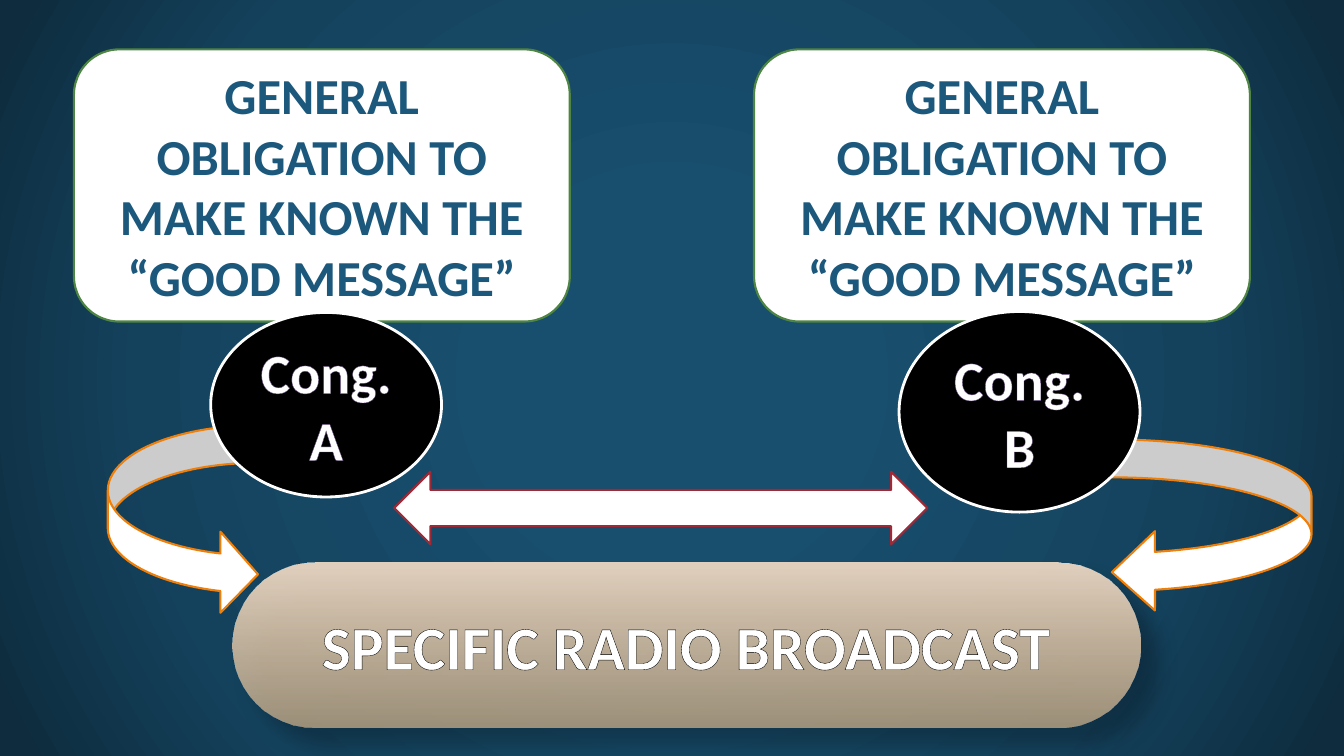
from dataclasses import dataclass
from typing import Optional

from lxml.etree import SubElement
from pptx import Presentation
from pptx.dml.color import RGBColor
from pptx.enum.shapes import MSO_SHAPE
from pptx.enum.text import MSO_ANCHOR, PP_ALIGN
from pptx.oxml import parse_xml
from pptx.oxml.ns import nsdecls, qn
from pptx.util import Pt

WHITE = "FFFFFF"
BLACK = "000000"
ORANGE = "F07F09"
OBLIGATION = "GENERAL OBLIGATION TO MAKE KNOWN THE “GOOD MESSAGE”"


@dataclass
class Label:
    text: str
    size: float
    color: str = WHITE
    outline: Optional[str] = None
    outline_width: float = 0


@dataclass
class Figure:
    kind: MSO_SHAPE
    left: float
    top: float
    width: float
    height: float
    fill: Optional[str] = WHITE
    line: Optional[str] = None
    line_width: float = 1.5
    adjustments: tuple = ()
    label: Optional[Label] = None


def rgb(color: str) -> RGBColor:
    return RGBColor.from_string(color)


def set_gradient(fill, owner, stops: list, direction: str) -> None:
    fill.gradient()
    gradient = next(owner.element.iter(qn("a:gradFill")))
    for child in list(gradient):
        gradient.remove(child)
    stop_list = SubElement(gradient, qn("a:gsLst"))
    for position, color, opacity in stops:
        stop = SubElement(stop_list, qn("a:gs"), pos=str(position * 1000))
        value = SubElement(stop, qn("a:srgbClr"), val=color)
        if opacity < 100:
            SubElement(value, qn("a:alpha"), val=str(opacity * 1000))
    gradient.append(parse_xml(direction))


def add_label(shape, label: Label) -> None:
    text_frame = shape.text_frame
    text_frame.text = label.text
    text_frame.word_wrap = True
    text_frame.vertical_anchor = MSO_ANCHOR.MIDDLE
    paragraph = text_frame.paragraphs[0]
    paragraph.alignment = PP_ALIGN.CENTER
    run = paragraph.runs[0]
    run.font.name = "Calibri"
    run.font.size = Pt(label.size)
    run.font.bold = True
    run.font.color.rgb = rgb(label.color)
    if label.outline:
        run.font._element.insert(0, parse_xml(
            f'<a:ln {nsdecls("a")} w="{Pt(label.outline_width)}"><a:solidFill>'
            f'<a:srgbClr val="{label.outline}"/></a:solidFill></a:ln>'))


def add_figure(slide, figure: Figure):
    shape = slide.shapes.add_shape(
        figure.kind, Pt(figure.left), Pt(figure.top), Pt(figure.width), Pt(figure.height))
    shape.shadow.inherit = False
    for index, value in enumerate(figure.adjustments):
        shape.adjustments[index] = value
    if figure.fill:
        shape.fill.solid()
        shape.fill.fore_color.rgb = rgb(figure.fill)
    if figure.line:
        shape.line.color.rgb = rgb(figure.line)
        shape.line.width = Pt(figure.line_width)
    else:
        shape.line.fill.background()
    if figure.label:
        add_label(shape, figure.label)
    return shape


def add_broadcast(slide) -> None:
    shape = add_figure(slide, Figure(
        MSO_SHAPE.ROUNDED_RECTANGLE, 166.3, 401.8, 648, 118, fill=None, adjustments=(0.5,),
        label=Label("SPECIFIC RADIO BROADCAST", 44, outline=BLACK, outline_width=1.06)))
    set_gradient(shape.fill, shape, [(0, "E2D1BE", 100), (100, "CEB18C", 74)],
                 f'<a:lin {nsdecls("a")} ang="5400000" scaled="0"/>')
    effects = next(shape.element.iter(qn("a:effectLst")))
    effects.append(parse_xml(
        f'<a:outerShdw {nsdecls("a")} blurRad="{Pt(15)}" dist="{Pt(18)}" dir="2700000" '
        f'algn="tl" rotWithShape="0"><a:srgbClr val="{BLACK}">'
        '<a:alpha val="30000"/></a:srgbClr></a:outerShdw>'))


def obligation_box(left: float) -> Figure:
    return Figure(MSO_SHAPE.ROUNDED_RECTANGLE, left, 35.3, 354.2, 194.4, line="4E8542",
                  label=Label(OBLIGATION, 36, "1B587C"))


def congregation(name: str, left: float, top: float, width: float, height: float) -> Figure:
    return Figure(MSO_SHAPE.OVAL, left, top, width, height, BLACK, WHITE, 2,
                  label=Label(f"Cong. {name}", 40, outline="604878", outline_width=0.8))


def main() -> None:
    presentation = Presentation()
    presentation.slide_width = Pt(960)
    presentation.slide_height = Pt(540)
    slide = presentation.slides.add_slide(presentation.slide_layouts[6])
    set_gradient(
        slide.background.fill, slide,
        [(0, "184E6E", 100), (23, "184E6E", 100), (69, "14425D", 100), (97, "0E2C3E", 100)],
        f'<a:path {nsdecls("a")} path="circle">'
        '<a:fillToRect l="50000" t="50000" r="50000" b="50000"/></a:path>')

    for left in (52.8, 538.6):
        add_figure(slide, obligation_box(left))
    add_broadcast(slide)
    for figure in (
        Figure(MSO_SHAPE.CURVED_RIGHT_ARROW, 77, 303.8, 107.3, 135.4, line=ORANGE,
               adjustments=(0.25, 0.54, 0.25)),
        congregation("A", 150.5, 223.2, 164.9, 131.8),
        Figure(MSO_SHAPE.CURVED_LEFT_ARROW, 794.2, 313.9, 142.6, 123.1, line=ORANGE,
               adjustments=(0.22, 0.46, 0.25)),
        congregation("B", 642.2, 222.5, 172.1, 143.3),
        Figure(MSO_SHAPE.LEFT_RIGHT_ARROW, 281.5, 337, 380.9, 51.8, line="9F2936"),
    ):
        add_figure(slide, figure)
    presentation.save("out.pptx")


if __name__ == "__main__":
    main()
